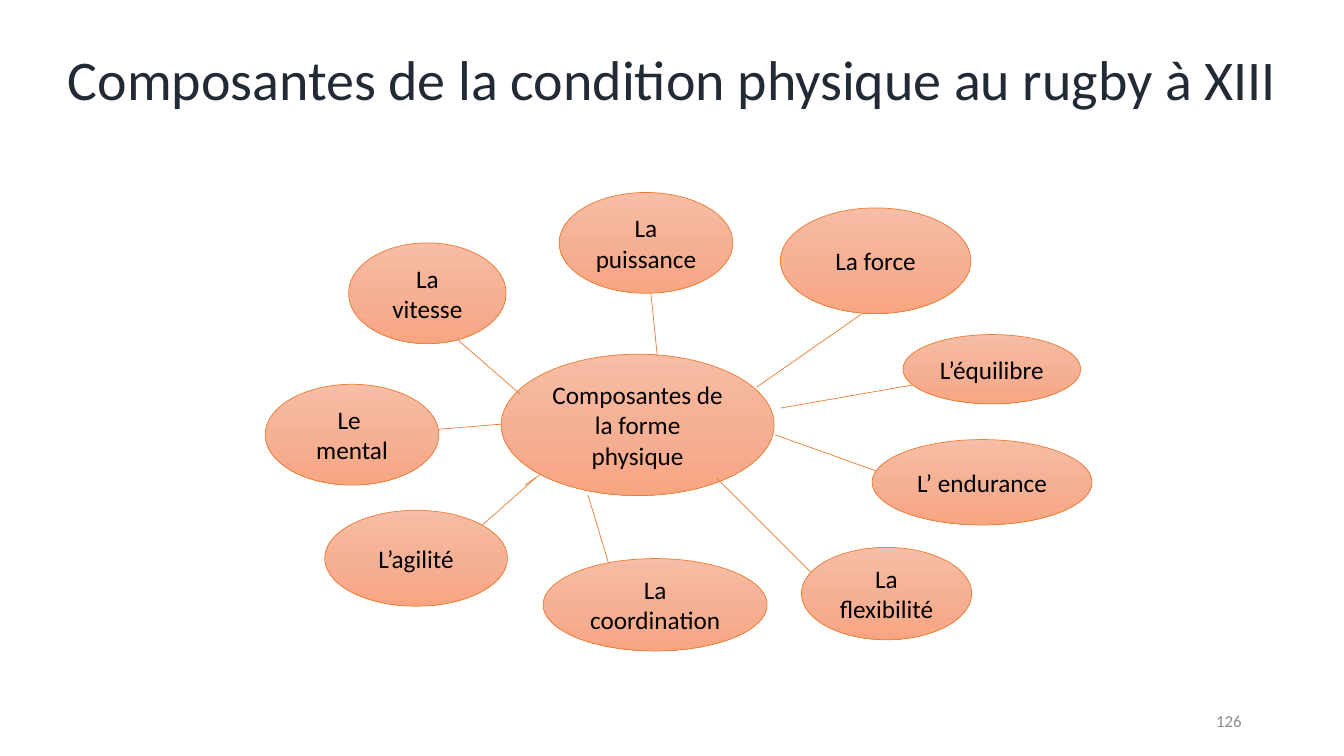
from copy import deepcopy

from pptx import Presentation
from pptx import util as u
from pptx.dml import color
from pptx.enum import shapes, text
from pptx.oxml import ns

ORANGE = "ED7D31"
GRADIENT = [(0, "F7BDA5"), (0.5, "F5B196"), (1, "F8A582")]
HUB = ("Composantes de la forme physique", (169, 116, 195, 101))
BUBBLES = [
    ("La vitesse", (60, 36.5, 112.5, 72), [(182.5, 144.5, 109, 80.5)]),
    ("La puissance", (210.5, 0.5, 124, 72), [(280.5, 117, 273, 43.5)]),
    ("La force", (368.5, 11.5, 136, 75.5), [(351.5, 139.5, 452, 69.5)]),
    ("L’ endurance", (434, 177, 157, 61), [(364.5, 173.5, 465, 209.5)]),
    ("La flexibilité", (383.5, 254, 121.5, 66), [(323, 204.5, 395, 276.5)]),
    ("L’agilité", (43, 227.5, 130.5, 68.5),
     [(186, 209.5, 197.5, 201.5), (193.5, 204.5, 112, 276.5)]),
    ("Le \nmental", (0.5, 137.5, 124, 72), [(169, 166, 76.5, 173.5)]),
    ("L’équilibre", (456, 102, 127, 49.5), [(368.5, 154.5, 483, 134.5)]),
    ("La coordination", (199, 262, 160, 66), [(231, 216.5, 254, 293)]),
]


def rgb(value):
    """Turn a hex string into a colour."""
    return color.RGBColor.from_string(value)


def assign(target, values):
    """Set attributes of an object from a dict."""
    for name, value in values.items():
        setattr(target, name, value)


def write(shape, wording, size, hue, align, spacing=None, **frame_format):
    """Write paragraphs in one style into a shape."""
    frame = shape.text_frame
    assign(frame, {"word_wrap": True, "vertical_anchor": text.MSO_ANCHOR.MIDDLE,
                   **frame_format})
    frame.text = wording
    for para in frame.paragraphs:
        assign(para, {"alignment": align, "line_spacing": spacing})
        for span in para.runs:
            assign(span.font, {"name": "Calibri", "size": u.Pt(size)})
            span.font.color.rgb = rgb(hue)


def text_box(page, box, *content, **frame_format):
    """Add a text box filling the given box."""
    write(page.shapes.add_textbox(*map(u.Pt, box)), *content, **frame_format)


def outline(shape):
    """Give a shape or connector the thin orange line."""
    shape.line.color.rgb = rgb(ORANGE)
    shape.line.width = u.Pt(0.5)


def bubble(page, left, top, wording, box):
    """Add a shaded ellipse at its place within the map."""
    x, y, width, height = box
    oval = page.shapes.add_shape(shapes.MSO_SHAPE.OVAL,
                                 *map(u.Pt, (left + x, top + y, width, height)))
    oval.shadow.inherit = False
    outline(oval)
    oval.fill.gradient()
    oval.fill.gradient_angle = 270
    stops = oval.fill._fill._gradFill.find(ns.qn("a:gsLst"))
    stops.append(deepcopy(stops[0]))
    for stop, (position, hue) in zip(oval.fill.gradient_stops, GRADIENT):
        stop.position = position
        stop.color.rgb = rgb(hue)
    write(oval, wording, 18, "000000", text.PP_ALIGN.CENTER)


def spoke(page, left, top, ends):
    """Add a plain line at its place within the map."""
    x1, y1, x2, y2 = ends
    line = page.shapes.add_connector(
        shapes.MSO_CONNECTOR.STRAIGHT,
        *map(u.Pt, (left + x1, top + y1, left + x2, top + y2)))
    outline(line)
    line._element.spPr.get_or_add_ln().addnext(
        line._element.makeelement(ns.qn("a:effectLst")))


def mind_map(page, left, top):
    """Place the hub, then each spoke with its bubble."""
    bubble(page, left, top, *HUB)
    for wording, box, lines in BUBBLES:
        for ends in lines:
            spoke(page, left, top, ends)
        bubble(page, left, top, wording, box)


def main():
    """Build the slide and save it."""
    deck = Presentation()
    assign(deck, {"slide_width": u.Pt(960), "slide_height": u.Pt(540)})
    page = deck.slides.add_slide(deck.slide_layouts[6])
    text_box(page, (0, 21, 960, 101),
             "Composantes de la condition physique au rugby à XIII",
             40, "222A35", text.PP_ALIGN.CENTER, spacing=0.9,
             vertical_anchor=text.MSO_ANCHOR.TOP, margin_top=u.Pt(16))
    mind_map(page, 189, 137)
    text_box(page, (678, 500.5, 216, 28.5), "126", 12, "8C8C8C",
             text.PP_ALIGN.RIGHT)
    deck.save("out.pptx")


if __name__ == "__main__":
    main()
